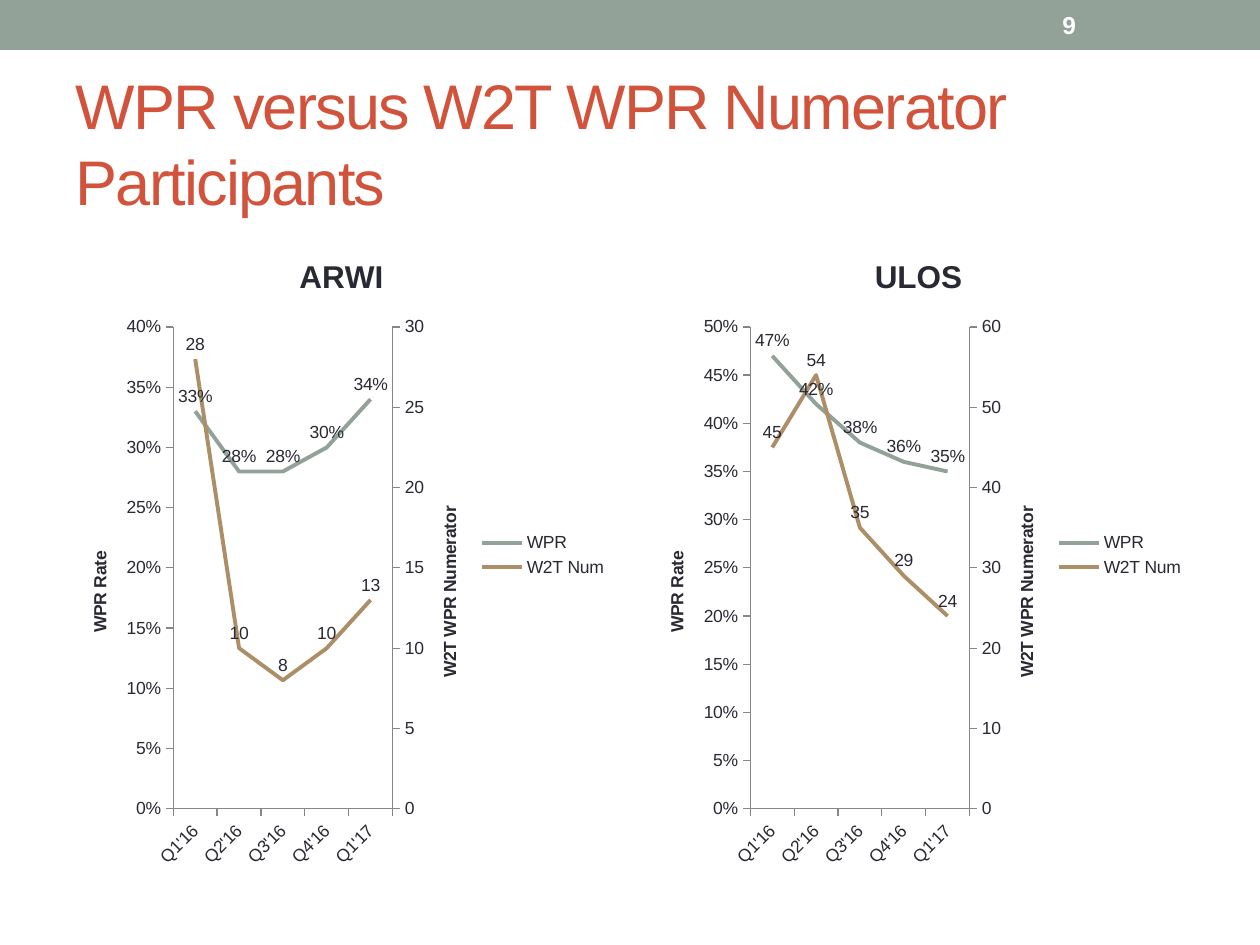
from copy import deepcopy

from pptx import Presentation
from pptx.chart.axis import ValueAxis
from pptx.chart.data import CategoryChartData
from pptx.dml.color import RGBColor
from pptx.enum.chart import XL_CHART_TYPE, XL_LABEL_POSITION, XL_LEGEND_POSITION, XL_TICK_MARK
from pptx.enum.shapes import MSO_SHAPE
from pptx.enum.text import MSO_ANCHOR, PP_ALIGN
from pptx.oxml.ns import qn
from pptx.util import Pt

LINE = XL_CHART_TYPE.LINE
ABOVE = XL_LABEL_POSITION.ABOVE
RIGHT = XL_LEGEND_POSITION.RIGHT
OUT, NONE = XL_TICK_MARK.OUTSIDE, XL_TICK_MARK.NONE
RECT = MSO_SHAPE.RECTANGLE
MIDDLE, LEFT = MSO_ANCHOR.MIDDLE, PP_ALIGN.LEFT

THEME = {
    "font": "Arial",
    "sage": RGBColor.from_string("93A299"),
    "tan": RGBColor.from_string("AD8F67"),
    "red": RGBColor.from_string("D2533C"),
    "ink": RGBColor.from_string("292934"),
    "grey": RGBColor.from_string("868686"),
    "white": RGBColor.from_string("FFFFFF"),
    "title": 36, "head": 18, "page": 14, "small": 10,
}
PX = 914400 / 126  # EMU in one px

QUARTERS = ["Q1'16", "Q2'16", "Q3'16", "Q4'16", "Q1'17"]
PANELS = [
    # name, left, rates, counts, (top, step) of left axis, (top, step) of right axis
    ("ARWI", 63, [0.33, 0.28, 0.28, 0.30, 0.34], [28, 10, 8, 10, 13], (0.4, 0.05), (30, 5)),
    ("ULOS", 640, [0.47, 0.42, 0.38, 0.36, 0.35], [45, 54, 35, 29, 24], (0.5, 0.05), (60, 10)),
]


def box(*sides):
    """Turn px lengths into EMU."""
    return [round(side * PX) for side in sides]


def write(frame, text, size="small", color="ink", bold=False, track=0, turn=None):
    """Put one line of text in a frame; track is in points, turn in degrees."""
    para = frame.paragraphs[0]
    para.alignment = LEFT if turn is None else None
    run = para.add_run()
    run.text = text
    font = run.font
    font.name, font.size, font.bold = THEME["font"], Pt(THEME[size]), bold
    font.color.rgb = THEME[color]
    if track:
        run._r.get_or_add_rPr().set("spc", str(track * 100))
    if turn is not None:
        body = frame._txBody.find(qn("a:bodyPr"))
        body.set("rot", str(turn * 60000))
        body.set("vert", "horz")


deck = Presentation()
deck.slide_width, deck.slide_height = box(1260, 945)
slide = deck.slides.add_slide(deck.slide_layouts[5])

bar = slide.shapes.add_shape(RECT, *box(0, 0, 1260, 50))
bar.shadow.inherit = False
bar.fill.solid()
bar.fill.fore_color.rgb = THEME["sage"]
bar.line.fill.background()

title = slide.shapes.title
title.left, title.top, title.width, title.height = box(63, 74, 1134, 136)
title.text_frame.word_wrap = True
title.text_frame.vertical_anchor = MIDDLE
write(title.text_frame, "WPR versus W2T WPR Numerator Participants",
      size="title", color="red", track=-1)

for name, left, rates, counts, rate_range, count_range in PANELS:
    data = CategoryChartData()
    data.categories = QUARTERS
    data.add_series("WPR", rates, "0%")
    data.add_series("W2T Num", counts, "0")
    chart = slide.shapes.add_chart(LINE, *box(left, 230, 557, 650), data).chart
    chart.font.name, chart.font.size = THEME["font"], Pt(THEME["small"])
    chart.font.color.rgb = THEME["ink"]
    chart.has_title = True
    write(chart.chart_title.text_frame, name, size="head", bold=True, turn=0)
    chart.chart_title.include_in_layout = False
    chart.has_legend = True
    chart.legend.position = RIGHT
    chart.legend.include_in_layout = False

    # Second line group on its own pair of axes
    first = chart.plots[0]._element
    second = deepcopy(first)
    first.addnext(second)
    first.remove(first.findall(qn("c:ser"))[1])
    second.remove(second.findall(qn("c:ser"))[0])
    cat, val = chart.category_axis._element, chart.value_axis._element
    side, base = deepcopy(val), deepcopy(cat)
    val.addnext(side)
    side.addnext(base)
    for node, number in zip(second.findall(qn("c:axId")), ("5001", "5002")):
        node.set("val", number)
    for axis, own, other in ((base, "5001", "5002"), (side, "5002", "5001")):
        axis.find(qn("c:axId")).set("val", own)
        axis.find(qn("c:crossAx")).set("val", other)
    base.find(qn("c:delete")).set("val", "1")
    side.find(qn("c:axPos")).set("val", "r")
    side.find(qn("c:crosses")).set("val", "max")

    axes = [
        (ValueAxis(val), "WPR Rate", "0%", rate_range),
        (ValueAxis(side), "W2T WPR Numerator", "0", count_range),
    ]
    for axis, label, form, (top, step) in axes:
        axis.has_major_gridlines = False
        axis.minimum_scale, axis.maximum_scale, axis.major_unit = 0, top, step
        axis.tick_labels.number_format = form
        axis.tick_labels.number_format_is_linked = False
        axis.has_title = True
        write(axis.axis_title.text_frame, label, bold=True, turn=-90)
    for axis in (chart.category_axis, axes[0][0], axes[1][0]):
        axis.major_tick_mark, axis.minor_tick_mark = OUT, NONE
        axis.format.line.color.rgb = THEME["grey"]
        axis.format.line.width = Pt(0.75)
    chart.category_axis.tick_labels.font.size = Pt(THEME["small"])
    cat.find(qn("c:txPr")).find(qn("a:bodyPr")).set("rot", str(-45 * 60000))

    for plot, color, form in zip(chart.plots, ("sage", "tan"), ("0%", "0")):
        plot.vary_by_categories = False
        line = plot.series[0]
        line.smooth = False
        line.format.line.color.rgb = THEME[color]
        line.format.line.width = Pt(2.25)
        plot.has_data_labels = True
        tags = plot.data_labels
        tags.show_value, tags.position = True, ABOVE
        tags.number_format, tags.number_format_is_linked = form, False

page = slide.shapes.add_textbox(*box(1050, 2, 147, 45)).text_frame
page.word_wrap = True
page.vertical_anchor = MIDDLE
write(page, "9", size="page", color="white", bold=True)

deck.save("out.pptx")
